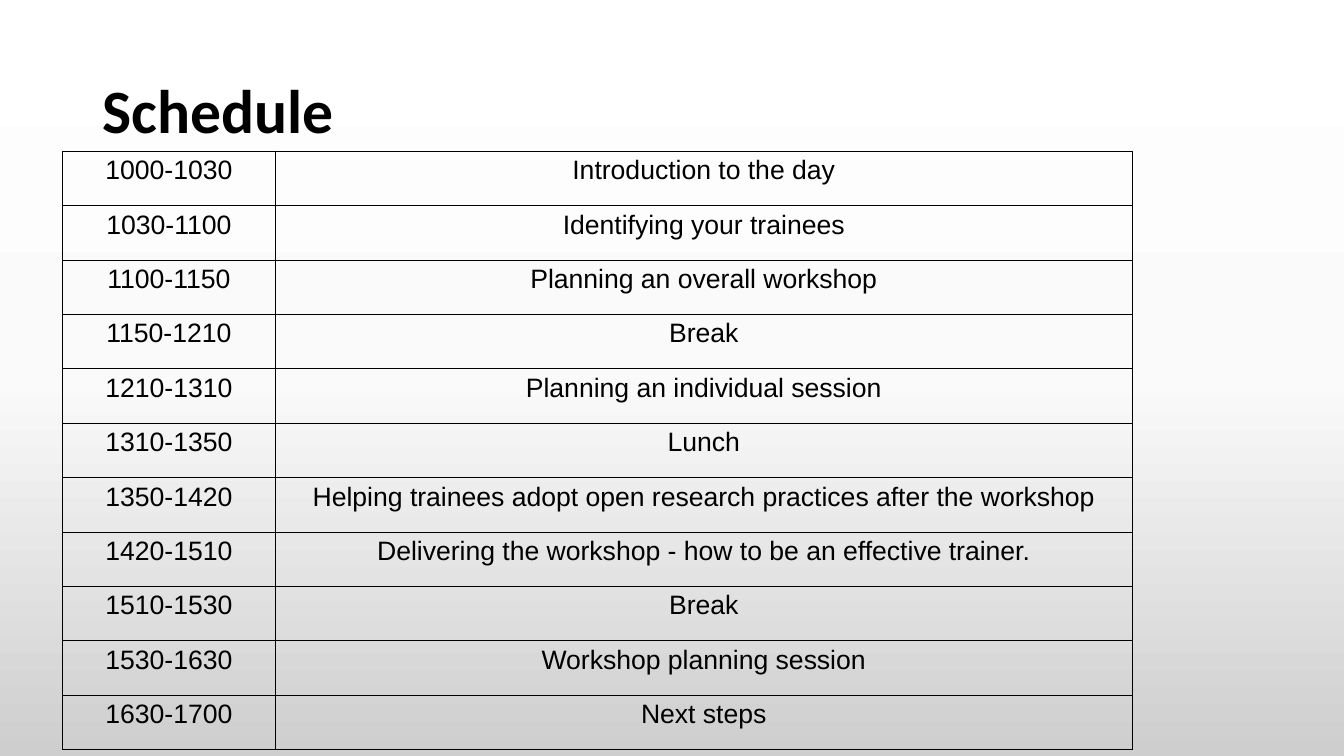
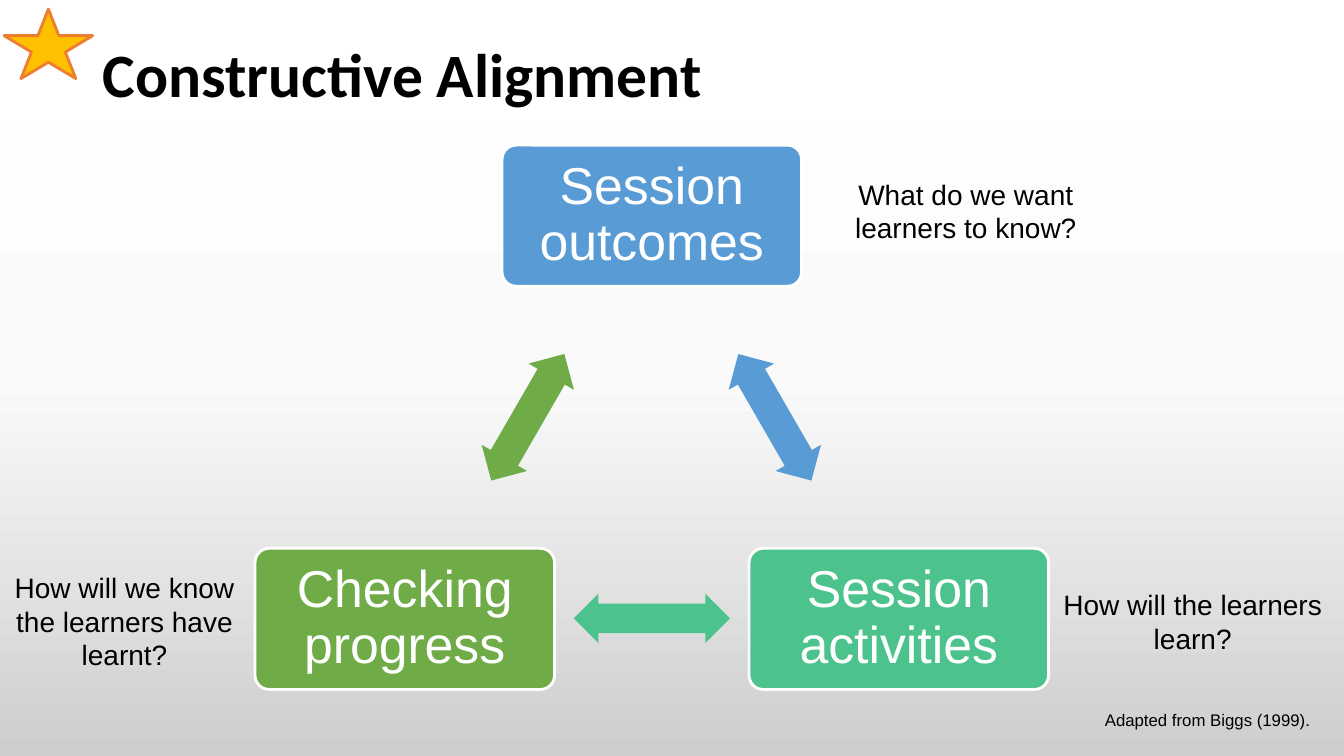
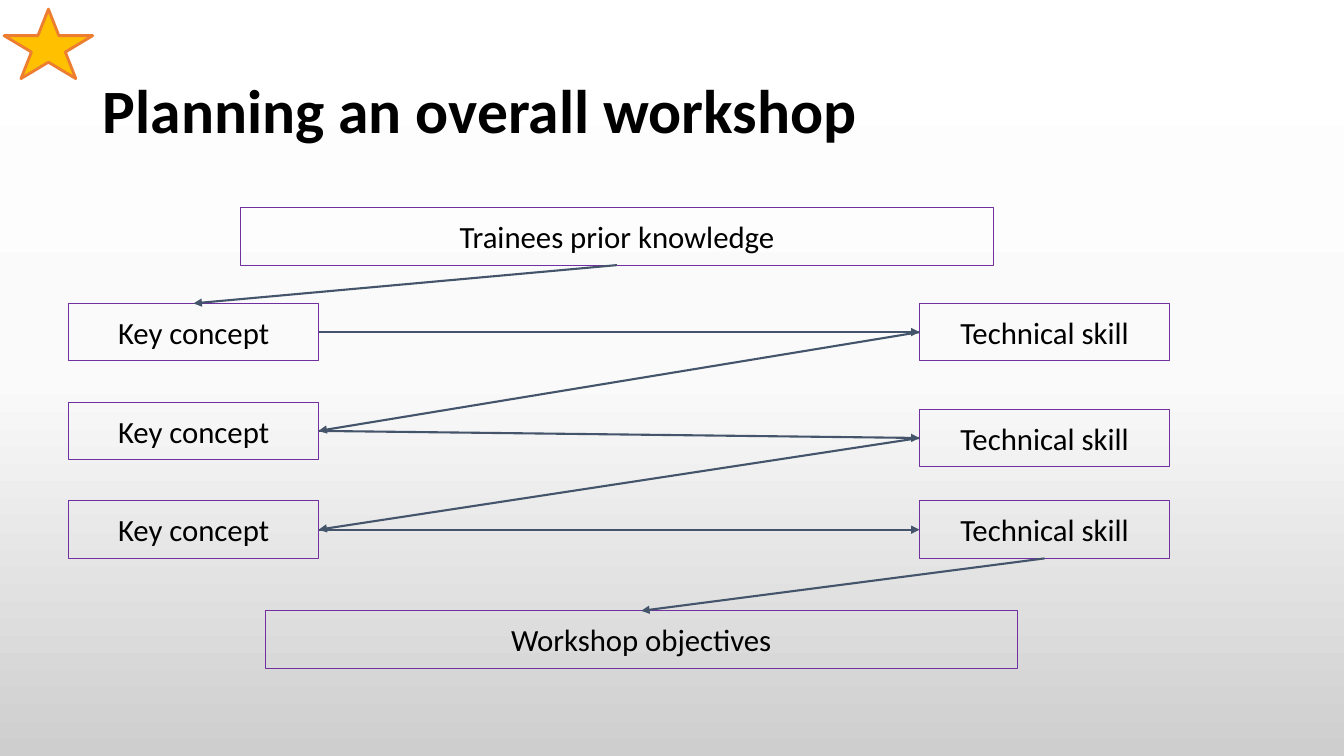
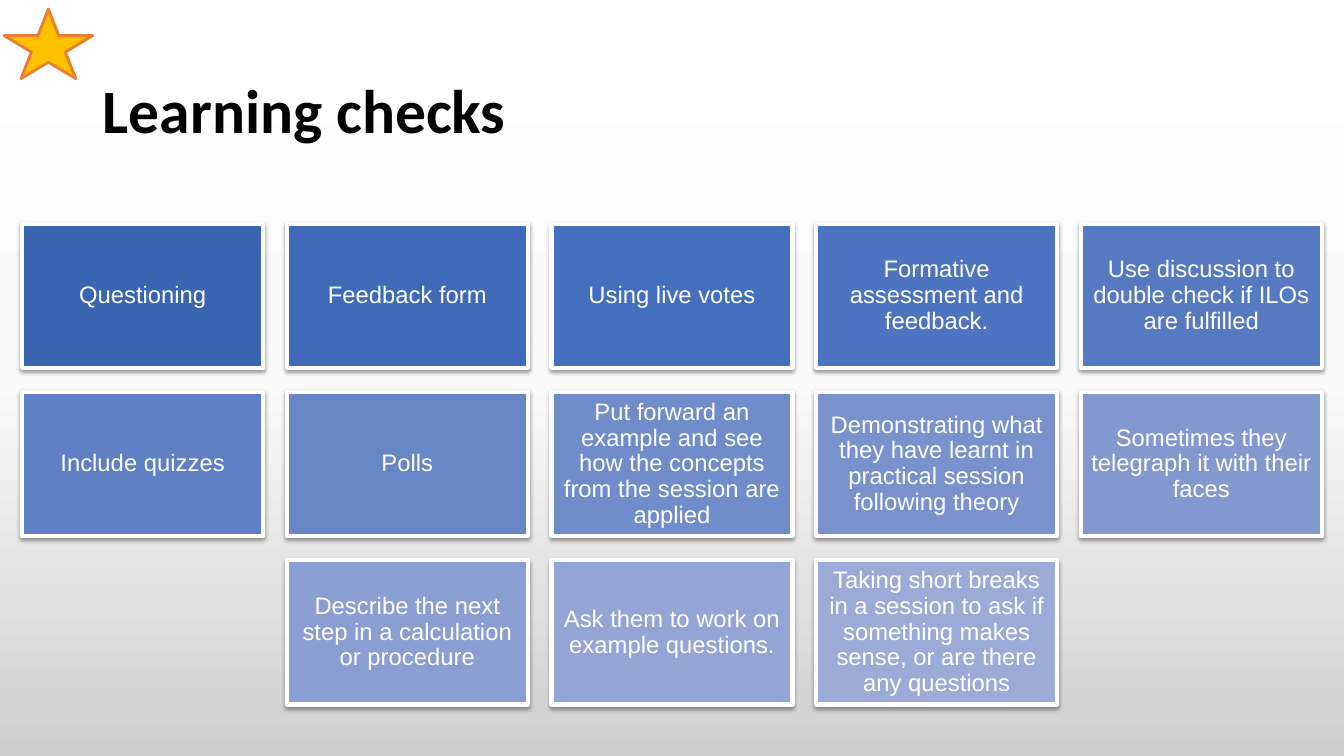
from copy import deepcopy
from lxml.etree import SubElement
from pptx import Presentation
from pptx.dml.color import RGBColor
from pptx.enum.shapes import MSO_CONNECTOR as Link, MSO_SHAPE as Form
from pptx.enum.text import MSO_ANCHOR as Anchor, MSO_AUTO_SIZE as Fit, PP_ALIGN as Align
from pptx.oxml.ns import qn
from pptx.util import Inches, Pt

hue = RGBColor.from_string
BLACK, WHITE = "000000", "FFFFFF"
BLUE, TEAL, GREEN = "599BD5", "4CC38C", "6FAB46"
GOLD, RUST, PLUM, SLATE = "FFC000", "ED7D31", "7030A0", "44546A"


def draw(page, form, spot, fill=None, edge=None, width=1):
    shape = page.shapes.add_shape(form, *map(Inches, spot))
    shape.shadow.inherit = False
    if fill:
        shape.fill.solid()
        shape.fill.fore_color.rgb = hue(fill)
    else:
        shape.fill.background()
    if edge:
        shape.line.color.rgb = hue(edge)
        shape.line.width = Pt(width)
    else:
        shape.line.fill.background()
    return shape


def write(frame, text, size, face="Arial", tone=BLACK, pad=(0.1, 0.05), space=None,
          anchor=Anchor.TOP, align=Align.CENTER, bold=False):
    frame.word_wrap = True
    frame.vertical_anchor = anchor
    frame.margin_left = frame.margin_right = Inches(pad[0])
    frame.margin_top = frame.margin_bottom = Inches(pad[1])
    line = frame.paragraphs[0]
    line.alignment = align
    if space:
        line.line_spacing = space
    run = line.add_run()
    run.text = text
    run.font.size = Pt(size)
    run.font.name = face
    run.font.bold = bold
    run.font.color.rgb = hue(tone)


deck = Presentation()
deck.slide_width = Inches(13.33)
deck.slide_height = Inches(7.5)

master = deck.slide_master
back = master.background.fill
back.gradient()
back.gradient_angle = 270
stops = master.element.find(".//" + qn("a:gsLst"))
stops.insert(1, deepcopy(stops[0]))
for stop, (place, tone) in zip(back.gradient_stops, [(0, WHITE), (0.5, "FAFAFA"), (1, "CECECE")]):
    stop.position = place
    stop.color.rgb = hue(tone)

layout = deck.slide_layouts[5]
head = layout.placeholders[0]
head.left, head.top, head.width, head.height = map(Inches, (0.92, 0.4, 9.71, 1.45))

pages = []
for name in ["Schedule", "Constructive Alignment", "Planning an overall workshop", "Learning checks"]:
    page = deck.slides.add_slide(layout)
    frame = page.shapes.title.text_frame
    frame.auto_size = Fit.NONE
    write(frame, name, 44, "Calibri", space=0.9, anchor=Anchor.MIDDLE, align=Align.LEFT, bold=True)
    if pages:
        draw(page, Form.STAR_5_POINT, (0.04, 0.09, 0.88, 0.69), GOLD, RUST, 2)
    pages.append(page)
agenda, model, plan, checks = pages

rows = [
    ("1000-1030", "Introduction to the day"),
    ("1030-1100", "Identifying your trainees"),
    ("1100-1150", "Planning an overall workshop"),
    ("1150-1210", "Break"),
    ("1210-1310", "Planning an individual session"),
    ("1310-1350", "Lunch"),
    ("1350-1420", "Helping trainees adopt open research practices after the workshop"),
    ("1420-1510", "Delivering the workshop - how to be an effective trainer."),
    ("1510-1530", "Break"),
    ("1530-1630", "Workshop planning session"),
    ("1630-1700", "Next steps"),
]
spot = map(Inches, (0.62, 1.5, 10.61, 0.54 * len(rows)))
table = agenda.shapes.add_table(len(rows), 2, *spot).table
table.first_row = table.horz_banding = False
table.columns[0].width = Inches(2.11)
table.columns[1].width = Inches(8.5)
for r, row in enumerate(rows):
    table.rows[r].height = Inches(0.54)
    for c, text in enumerate(row):
        cell = table.cell(r, c)
        write(cell.text_frame, text, 19, space=1.15)
        cell.margin_left = cell.margin_right = Inches(0.07)
        cell.margin_top = cell.margin_bottom = 0
        props = cell._tc.get_or_add_tcPr()
        for side in ["a:lnL", "a:lnR", "a:lnT", "a:lnB"]:
            rule = SubElement(props, qn(side), w=str(Pt(0.75)))
            SubElement(SubElement(rule, qn("a:solidFill")), qn("a:srgbClr"), val=BLACK)
        cell.fill.background()

model.shapes.title.text_frame.margin_bottom = Inches(0.77)
for text, x, y, fill in [
    ("Session outcomes", 4.98, 1.44, BLUE),
    ("Session activities", 7.43, 5.44, TEAL),
    ("Checking progress", 2.53, 5.44, GREEN),
]:
    node = draw(model, Form.ROUNDED_RECTANGLE, (x, y, 2.97, 1.4), fill, WHITE, 2)
    node.adjustments[0] = 0.1
    write(node.text_frame, text, 37, tone=WHITE, pad=(0.15, 0.15), space=0.9, anchor=Anchor.MIDDLE)

for spot, turn, fill in [
    ((6.96, 3.88, 1.45, 0.52), 60, BLUE),
    ((5.69, 5.89, 1.55, 0.49), 180, TEAL),
    ((4.51, 3.88, 1.45, 0.52), 300, GREEN),
]:
    arrow = draw(model, Form.LEFT_RIGHT_ARROW, spot, fill)
    arrow.adjustments[0] = 0.6
    arrow.adjustments[1] = 0.5
    arrow.rotation = turn

for text, spot, size, align in [
    ("What do we want learners to know?", (8.08, 1.71, 3, 0.77), 20, Align.CENTER),
    ("How will we know the learners have learnt?", (0.04, 5.61, 2.39, 1.11), 20, Align.CENTER),
    ("How will the learners learn?", (10.33, 5.78, 3, 0.77), 20, Align.CENTER),
    ("Adapted from Biggs (1999).", (10.86, 6.99, 2.47, 0.3), 12, Align.LEFT),
]:
    note = model.shapes.add_textbox(*map(Inches, spot))
    write(note.text_frame, text, size, align=align)

boxes = []
for text, x, y, width in [
    ("Trainees prior knowledge", 2.39, 2.06, 7.46),
    ("Key concept", 0.68, 3.01, 2.48),
    ("Technical skill", 9.12, 3.01, 2.48),
    ("Key concept", 0.68, 3.99, 2.48),
    ("Technical skill", 9.12, 4.06, 2.48),
    ("Key concept", 0.68, 4.97, 2.48),
    ("Technical skill", 9.12, 4.97, 2.48),
    ("Workshop objectives", 2.63, 6.06, 7.46),
]:
    box = draw(plan, Form.RECTANGLE, (x, y, width, 0.57), edge=PLUM, width=0.75)
    write(box.text_frame, text, 22, "Calibri", pad=(0.1, 0.1))
    boxes.append(box)

sides = [(2, 0), (3, 1), (1, 3), (3, 1), (1, 3), (3, 1), (2, 0)]
for start, end, (out, into) in zip(boxes, boxes[1:], sides):
    link = plan.shapes.add_connector(Link.STRAIGHT, 0, 0, 0, 0)
    link.begin_connect(start, out)
    link.end_connect(end, into)
    link.line.color.rgb = hue(SLATE)
    link.line.width = Pt(1.5)
    SubElement(link.line._get_or_add_ln(), qn("a:tailEnd"), type="triangle")
    SubElement(link._element.spPr, qn("a:effectLst"))

cards = [
    ("Questioning", "3A66B1"),
    ("Feedback form", "3E6AB8"),
    ("Using live votes", "446FBE"),
    ("Formative assessment and feedback.", "4C74C0"),
    ("Use discussion to double check if ILOs are fulfilled", "567AC2"),
    ("Include quizzes", "5F80C4"),
    ("Polls", "6786C7"),
    ("Put forward an example and see how the concepts from the session are applied", "708CCA"),
    ("Demonstrating what they have learnt in practical session following theory", "7992CD"),
    ("Sometimes they telegraph it with their faces", "8298CF"),
    ("Describe the next step in a calculation or procedure", "8B9ED1"),
    ("Ask them to work on example questions.", "93A5D5"),
    ("Taking short breaks in a session to ask if something makes sense, or are there any questions", "9BABD7"),
]
for i, (text, fill) in enumerate(cards):
    r, c = divmod(i, 5)
    if r == 2:
        c += 1
    spot = (0.22 + c * 10.5 / 4, 2.22 + r * 1.67, 2.39, 1.43)
    card = draw(checks, Form.RECTANGLE, spot, fill, WHITE, 3)
    write(card.text_frame, text, 17, tone=WHITE, pad=(0.07, 0.07), space=0.9, anchor=Anchor.MIDDLE)
    glow = SubElement(card._element.spPr.find(qn("a:effectLst")), qn("a:outerShdw"),
                      blurRad=str(Pt(3.1)), dist=str(Pt(1.6)), dir="5400000", rotWithShape="0")
    shade = SubElement(glow, qn("a:srgbClr"), val=BLACK)
    SubElement(shade, qn("a:alpha"), val="37000")

deck.save("out.pptx")
